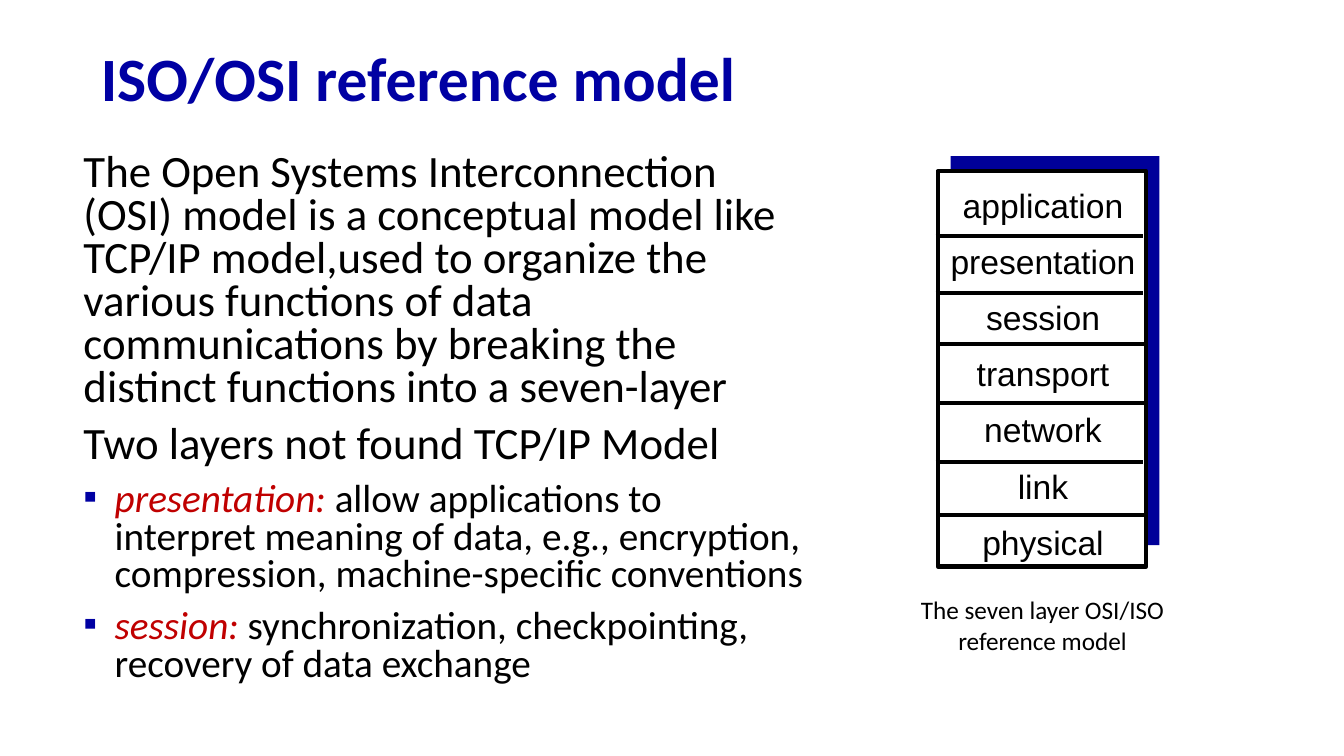
"""Build the ISO/OSI reference model slide."""
from dataclasses import dataclass

import lxml.etree
import pptx
import pptx.dml.color
import pptx.enum.shapes
import pptx.enum.text
import pptx.oxml.ns
import pptx.util

Inches = pptx.util.Inches
Pt = pptx.util.Pt
RGB = pptx.dml.color.RGBColor
ALIGN = pptx.enum.text.PP_ALIGN
ANCHOR = pptx.enum.text.MSO_ANCHOR
AUTO_SIZE = pptx.enum.text.MSO_AUTO_SIZE
qn = pptx.oxml.ns.qn


@dataclass(frozen=True)
class Theme:
    title_blue: RGB = RGB(0x00, 0x00, 0xA3)
    shadow_blue: RGB = RGB(0x00, 0x00, 0x99)
    term_red: RGB = RGB(0xC0, 0x00, 0x00)
    black: RGB = RGB(0x00, 0x00, 0x00)
    white: RGB = RGB(0xFF, 0xFF, 0xFF)
    text_font: str = "Calibri"
    layer_font: str = "Arial"
    title_size: int = 44
    body_size: int = 32
    bullet_size: int = 28
    layer_size: int = 24
    caption_size: int = 18
    line_width: int = 3


@dataclass(frozen=True)
class Box:
    left: float
    top: float
    width: float
    height: float

    def lengths(self) -> tuple:
        return tuple(Inches(v) for v in (self.left, self.top, self.width, self.height))


@dataclass(frozen=True)
class BodyItem:
    text: str
    term: str = ""


@dataclass(frozen=True)
class Divider:
    left: float
    y: float


THEME = Theme()
TITLE_BOX = Box(0.9, 0.32, 11.5, 0.98)
BODY_BOX = Box(0.73, 1.47, 7.4, 5.61)
SHADOW_BOX = Box(9.43, 1.55, 2.07, 3.86)
STACK_BOX = Box(9.3, 1.7, 2.07, 3.92)
LABELS_BOX = Box(9.26, 1.89, 2.17, 3.73)
CAPTION_BOX = Box(8.99, 5.85, 2.7, 0.71)
DIVIDER_LENGTH = 2.06
BODY = [
    BodyItem("The Open Systems Interconnection (OSI) model is a conceptual model like "
             "TCP/IP model,used to organize the various functions of data communications "
             "by breaking the distinct functions into a seven-layer"),
    BodyItem("Two layers not found TCP/IP Model"),
    BodyItem("allow applications to interpret meaning of data, e.g., encryption, "
             "compression, machine-specific conventions", "presentation: "),
    BodyItem("synchronization, checkpointing, recovery of data exchange", "session: "),
]
LAYERS = ["application", "presentation", "session", "transport", "network", "link", "physical"]
DIVIDERS = [Divider(9.28, 2.34), Divider(9.28, 2.91), Divider(9.3, 3.41),
            Divider(9.3, 4.0), Divider(9.28, 4.58), Divider(9.3, 5.11)]
CAPTION = ["The seven layer OSI/ISO", "reference model"]


def format_run(r, size: int, color: RGB, font: str = THEME.text_font) -> None:
    r.font.name = font
    r.font.size = Pt(size)
    r.font.color.rgb = color


def add_title(slide, text: str) -> None:
    sp = slide.shapes.title
    sp.left, sp.top, sp.width, sp.height = TITLE_BOX.lengths()
    tf = sp.text_frame
    tf.text = text
    tf.auto_size = AUTO_SIZE.NONE
    tf.vertical_anchor = ANCHOR.MIDDLE
    p = tf.paragraphs[0]
    p.alignment = ALIGN.LEFT
    p.line_spacing = 0.9
    format_run(p.runs[0], THEME.title_size, THEME.title_blue)
    p.runs[0].font.bold = True


def add_bullet(p) -> None:
    pPr = p._p.get_or_add_pPr()
    pPr.set("marL", str(Inches(0.31)))
    pPr.set("indent", str(-Inches(0.31)))
    color = lxml.etree.SubElement(pPr, qn("a:buClr"))
    lxml.etree.SubElement(color, qn("a:srgbClr"), val=str(THEME.title_blue))
    lxml.etree.SubElement(pPr, qn("a:buFont"), typeface=THEME.layer_font)
    lxml.etree.SubElement(pPr, qn("a:buChar"), char="▪")


def add_body(slide, items: list[BodyItem]) -> None:
    tf = slide.shapes.add_textbox(*BODY_BOX.lengths()).text_frame
    tf.word_wrap = True
    for i, item in enumerate(items):
        p = tf.add_paragraph() if i else tf.paragraphs[0]
        p.line_spacing = 0.8
        p.space_before = Pt(10)
        if item.term:
            add_bullet(p)
            r = p.add_run()
            r.text = item.term
            format_run(r, THEME.bullet_size, THEME.term_red)
            r.font.italic = True
        r = p.add_run()
        r.text = item.text
        format_run(r, THEME.bullet_size if item.term else THEME.body_size, THEME.black)


def add_rectangle(slide, box: Box, fill: RGB, outlined: bool) -> None:
    sp = slide.shapes.add_shape(pptx.enum.shapes.MSO_SHAPE.RECTANGLE, *box.lengths())
    sp.shadow.inherit = False
    sp.fill.solid()
    sp.fill.fore_color.rgb = fill
    if outlined:
        sp.line.color.rgb = THEME.black
        sp.line.width = Pt(THEME.line_width)
    else:
        sp.line.fill.background()


def add_centered_lines(slide, box: Box, lines: list[str], size: int, font: str,
                       wrap: bool, spacing: float = 1.0, gap: int = 0) -> None:
    tf = slide.shapes.add_textbox(*box.lengths()).text_frame
    tf.word_wrap = wrap
    tf.text = "\n".join(lines)
    for p in tf.paragraphs:
        p.alignment = ALIGN.CENTER
        p.line_spacing = spacing
        p.space_after = Pt(gap)
        format_run(p.runs[0], size, THEME.black, font)


def add_divider(slide, divider: Divider) -> None:
    y = Inches(divider.y)
    line = slide.shapes.add_connector(
        pptx.enum.shapes.MSO_CONNECTOR.STRAIGHT,
        Inches(divider.left), y, Inches(divider.left + DIVIDER_LENGTH), y)
    line.line.color.rgb = THEME.black
    line.line.width = Pt(THEME.line_width)
    lxml.etree.SubElement(line._element.spPr, qn("a:effectLst"))


def main() -> None:
    prs = pptx.Presentation()
    prs.slide_width = Inches(13.33)
    prs.slide_height = Inches(7.5)
    slide = prs.slides.add_slide(prs.slide_layouts.get_by_name("Title Only"))
    add_title(slide, "ISO/OSI reference model")
    add_body(slide, BODY)
    add_rectangle(slide, SHADOW_BOX, THEME.shadow_blue, outlined=False)
    add_rectangle(slide, STACK_BOX, THEME.white, outlined=True)
    add_centered_lines(slide, LABELS_BOX, LAYERS, THEME.layer_size, THEME.layer_font,
                       wrap=True, spacing=0.7, gap=20)
    for divider in DIVIDERS:
        add_divider(slide, divider)
    add_centered_lines(slide, CAPTION_BOX, CAPTION, THEME.caption_size, THEME.text_font,
                       wrap=False)
    prs.save("out.pptx")


if __name__ == "__main__":
    main()
